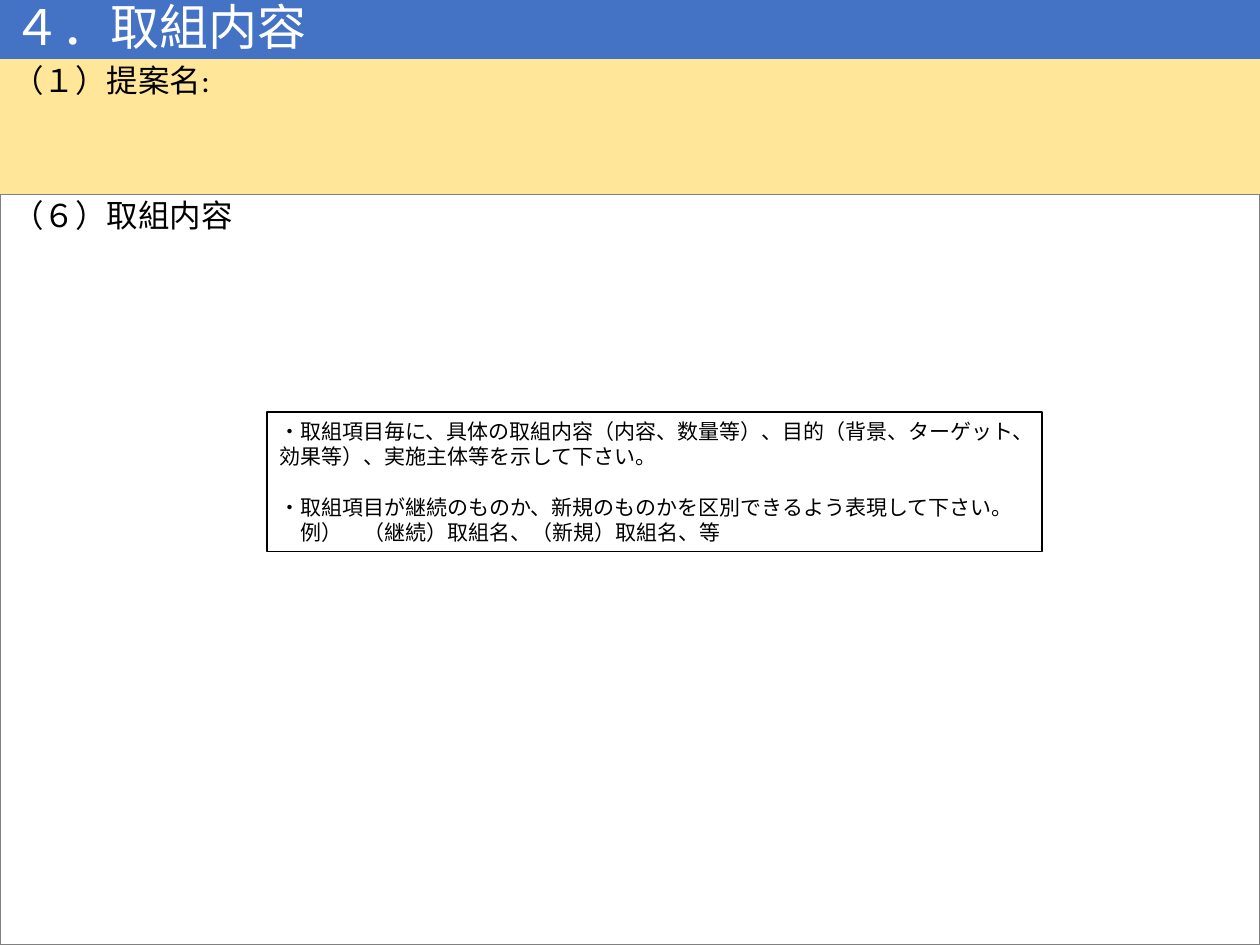
from pptx import Presentation
from pptx.dml.color import RGBColor
from pptx.enum.shapes import MSO_SHAPE
from pptx.enum.text import MSO_ANCHOR, MSO_AUTO_SIZE, PP_ALIGN
from pptx.util import Pt

RECT = MSO_SHAPE.RECTANGLE
TOP, MIDDLE = MSO_ANCHOR.TOP, MSO_ANCHOR.MIDDLE
LEFT = PP_ALIGN.LEFT
NO_FIT, GROW = MSO_AUTO_SIZE.NONE, MSO_AUTO_SIZE.SHAPE_TO_FIT_TEXT

WIDTH, HEIGHT = 720, 540
TITLE_HEIGHT = 33.84
PROPOSAL_HEIGHT = 77.04
CONTENT_TOP = TITLE_HEIGHT + PROPOSAL_HEIGHT


def rgb(hex_string):
    return RGBColor.from_string(hex_string)


class FormSlide:
    FONT = "Calibri"
    BLACK, WHITE, GRAY = "000000", "FFFFFF", "808080"
    BLUE, YELLOW = "4472C4", "FFE699"

    def __init__(self, slide):
        self.slide = slide

    def add_text(self, paragraph, text, size, color, spacing=1, before=0):
        paragraph.alignment = LEFT
        paragraph.line_spacing = spacing
        paragraph.space_before = Pt(before)
        run = paragraph.add_run()
        run.text = text
        run.font.name = self.FONT
        run.font.size = Pt(size)
        run.font.color.rgb = rgb(color)

    def title(self, text, height):
        heading = self.slide.shapes.title
        heading.left, heading.top = Pt(0), Pt(0)
        heading.width, heading.height = Pt(WIDTH), Pt(height)
        heading.fill.solid()
        heading.fill.fore_color.rgb = rgb(self.BLUE)
        frame = heading.text_frame
        frame.auto_size = NO_FIT
        frame.vertical_anchor = MIDDLE
        self.add_text(frame.paragraphs[0], text, 28, self.WHITE, 0.9)

    def box(self, left, top, width, height, fill=None, line=None, weight=1):
        area = self.slide.shapes.add_shape(
            RECT, Pt(left), Pt(top), Pt(width), Pt(height))
        area.shadow.inherit = False
        if fill:
            area.fill.solid()
            area.fill.fore_color.rgb = rgb(fill)
        else:
            area.fill.background()
        if line:
            area.line.color.rgb = rgb(line)
            area.line.width = Pt(weight)
        else:
            area.line.fill.background()
        frame = area.text_frame
        frame.word_wrap = True
        frame.vertical_anchor = TOP
        return frame

    def section(self, label, top, height, fill=None, line=None):
        frame = self.box(0, top, WIDTH, height, fill, line)
        self.add_text(frame.paragraphs[0], label, 18, self.BLACK, 0.9, 10)

    def guidance(self, left, top, width, height, notes):
        frame = self.box(left, top, width, height, line=self.BLACK, weight=0.75)
        frame.auto_size = GROW
        for index, (text, before) in enumerate(notes):
            paragraph = frame.add_paragraph() if index else frame.paragraphs[0]
            self.add_text(paragraph, text, 12, self.BLACK, before=before)


def main():
    prs = Presentation()
    prs.slide_width, prs.slide_height = Pt(WIDTH), Pt(HEIGHT)
    form = FormSlide(prs.slides.add_slide(prs.slide_layouts[5]))

    # Heading band
    form.title("４．取組内容", TITLE_HEIGHT)

    # Form sections
    form.section("（６）取組内容", CONTENT_TOP, HEIGHT - CONTENT_TOP, line=form.GRAY)
    form.section("（１）提案名:", TITLE_HEIGHT, PROPOSAL_HEIGHT, fill=form.YELLOW)

    # Guidance for filling in the form, each with its space before
    form.guidance(152.64, 235.44, 442.8, 79.92, [
        ("・取組項目毎に、具体の取組内容（内容、数量等）、目的（背景、ターゲット、"
         "効果等）、実施主体等を示して下さい。", 0),
        ("・取組項目が継続のものか、新規のものかを区別できるよう表現して下さい。", 14.5),
        ("　例）　（継続）取組名、（新規）取組名、等", 0),
    ])

    prs.save("out.pptx")


if __name__ == "__main__":
    main()
